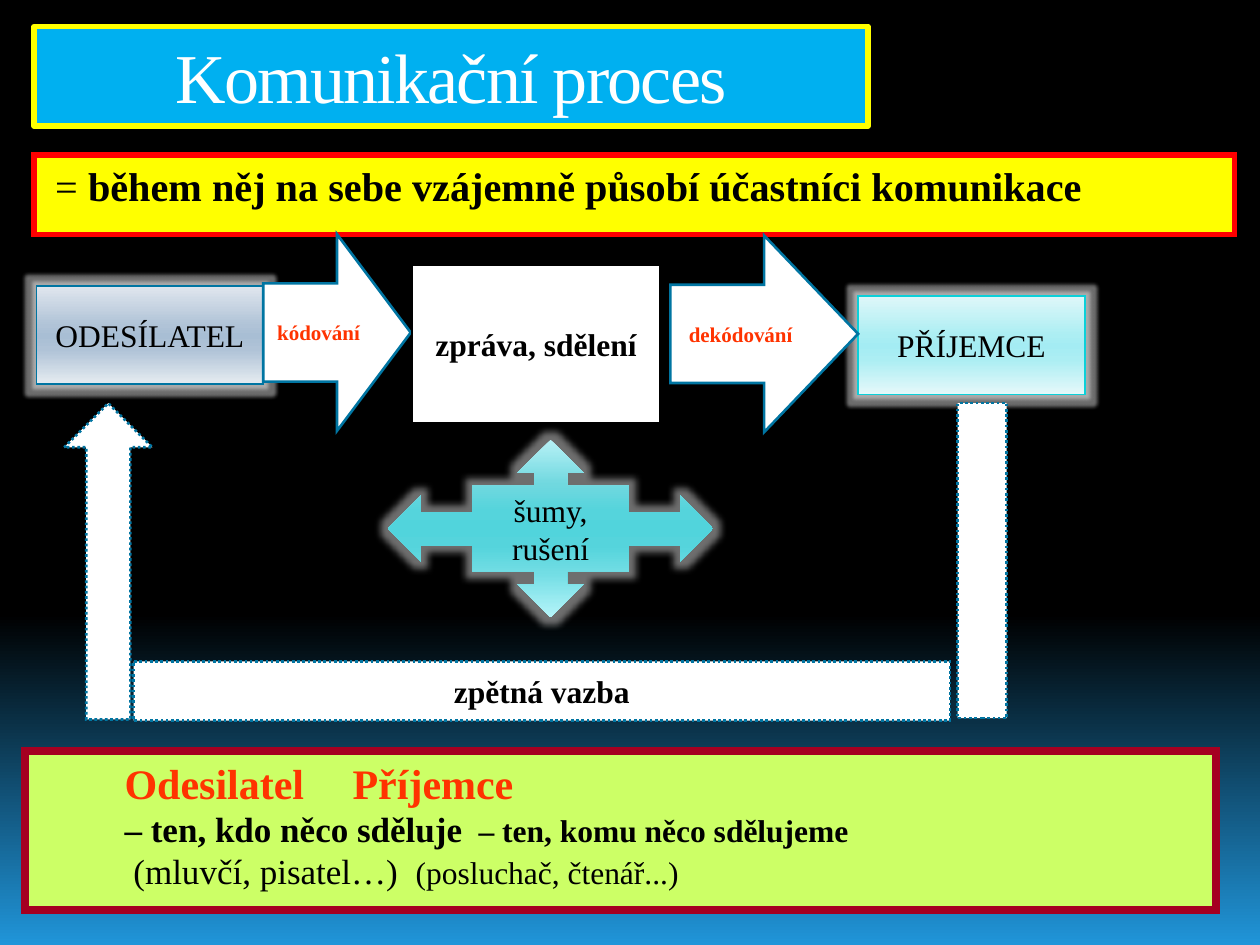
from lxml import etree
from pptx import Presentation
from pptx.dml.color import RGBColor
from pptx.enum.dml import MSO_LINE
from pptx.enum.shapes import MSO_SHAPE
from pptx.enum.text import MSO_ANCHOR, PP_ALIGN
from pptx.oxml.ns import qn
from pptx.util import Pt

PX = 9144  # 100 px to the inch
FONT = "Times New Roman"
RECTANGLE = MSO_SHAPE.RECTANGLE
RIGHT_ARROW = MSO_SHAPE.RIGHT_ARROW
UP_ARROW = MSO_SHAPE.UP_ARROW
CALLOUT = MSO_SHAPE.QUAD_ARROW_CALLOUT
DOTTED = MSO_LINE.ROUND_DOT
TOP, MIDDLE, BOTTOM = MSO_ANCHOR.TOP, MSO_ANCHOR.MIDDLE, MSO_ANCHOR.BOTTOM
LEFT, CENTER = PP_ALIGN.LEFT, PP_ALIGN.CENTER
BLACK, WHITE, RED, BLUE = "000000", "FFFFFF", "FF3300", "0075A2"
hex_color = RGBColor.from_string


def fill_gradient(fill, element, stops):
    """Fill from top to bottom with (percent, colour) stops."""
    fill.gradient()
    fill.gradient_angle = 270
    stop_list = element.xpath(".//a:gsLst")[0]
    for stop in list(stop_list):
        stop_list.remove(stop)
    for percent, color in stops:
        stop = etree.SubElement(stop_list, qn("a:gs"), pos=str(percent * 1000))
        etree.SubElement(stop, qn("a:srgbClr"), val=color)


def add_run(paragraph, text, size, color=BLACK, bold=False):
    run = paragraph.add_run()
    run.text = text
    formats = {"name": FONT, "size": Pt(size), "bold": bold}
    for name, value in formats.items():
        setattr(run.font, name, value)
    run.font.color.rgb = hex_color(color)
    return run


presentation = Presentation()
presentation.slide_width, presentation.slide_height = 1000 * PX, 750 * PX
slide = presentation.slides.add_slide(presentation.slide_layouts[5])
fill_gradient(slide.background.fill, slide.element,
              [(0, BLACK), (65, BLACK), (100, "2095D9")])

# Title
title = slide.shapes.title
title_box = {"left": 27, "top": 21, "width": 662, "height": 79}
for name, value in title_box.items():
    setattr(title, name, value * PX)
title.fill.solid()
title.fill.fore_color.rgb = hex_color("00B0F0")
title.line.color.rgb = hex_color("FFFF00")
title.line.width = Pt(3)
title.text_frame.vertical_anchor = BOTTOM
title.text_frame.margin_bottom = 7 * PX
title_paragraph = title.text_frame.paragraphs[0]
title_paragraph.alignment = CENTER
title_run = add_run(title_paragraph, "Komunikační proces", 40, WHITE)
title_run.font._element.set("spc", "-100")

# Panels and diagram, from back to front
sender_stops = [(0, "E0E6EE"), (40, "B0C3D7"), (50, "A8BED4"),
                (65, "B0C3D7"), (100, "E6ECF1")]
receiver_stops = [(0, "DEF7F9"), (40, "ACEEF3"), (50, "A4ECF3"),
                  (65, "ACEEF3"), (100, "E5F8FA")]
noise_stops = [(0, "B7F1F6"), (25, "70D8DF"), (40, "55D4DC"), (50, "51D4DC"),
               (60, "55D4DC"), (75, "72DDE4"), (100, "B5F4F9")]
# name, preset, box, fill, line (colour, width, dash), text (wording, size, colour, bold)
parts = [
    ("definition", RECTANGLE, (27, 123, 953, 63), "FFFF00", ("FF0000", 3, None), None),
    ("sender", RECTANGLE, (29, 227, 180, 78), sender_stops, (BLUE, 0.94, None),
     ("ODESÍLATEL", 18, BLACK, False)),
    ("encoding", RIGHT_ARROW, (209, 186, 117, 156), WHITE, (BLUE, 1.5, None),
     ("kódování", 12, RED, True)),
    ("message", RECTANGLE, (327, 210, 197, 126), WHITE, (BLACK, 1.5, None),
     ("zpráva, sdělení", 18, BLACK, True)),
    ("receiver", RECTANGLE, (681, 235, 180, 78), receiver_stops, ("0BD0D9", 0.94, None),
     ("PŘÍJEMCE", 18, BLACK, False)),
    ("feedback up", UP_ARROW, (51, 320, 70, 251), WHITE, (BLUE, 1.5, DOTTED), None),
    ("feedback down", RECTANGLE, (760, 320, 39, 250), WHITE, (BLUE, 1.5, DOTTED), None),
    ("feedback", RECTANGLE, (106, 525, 648, 47), WHITE, (BLUE, 1.5, DOTTED),
     ("zpětná vazba", 18, BLACK, True)),
    ("noise", CALLOUT, (308, 349, 258, 141), noise_stops, None,
     ("šumy, rušení", 18, BLACK, False)),
    ("roles", RECTANGLE, (20, 596, 945, 126), "CCFF66", ("A50021", 4.5, None), None),
    ("decoding", RIGHT_ARROW, (532, 187, 149, 156), WHITE, (BLUE, 1.5, None),
     ("dekódování", 12, RED, True)),
]
shapes = {}
for name, preset, box, fill, line, text in parts:
    shape = slide.shapes.add_shape(preset, *(length * PX for length in box))
    shape.shadow.inherit = False
    shapes[name] = shape
    if isinstance(fill, str):
        shape.fill.solid()
        shape.fill.fore_color.rgb = hex_color(fill)
    else:
        fill_gradient(shape.fill, shape.element, fill)
        glow_radius = 6 if line else 11
        effects = shape.element.spPr.find(qn("a:effectLst"))
        glow = etree.SubElement(effects, qn("a:glow"), rad=str(glow_radius * PX))
        glow_color = etree.SubElement(glow, qn("a:srgbClr"), val=WHITE)
        etree.SubElement(glow_color, qn("a:alpha"), val="43000")
    if line:
        color, width, dash = line
        shape.line.color.rgb = hex_color(color)
        shape.line.width = Pt(width)
        shape.line.dash_style = dash
        outline = shape.element.spPr.find(qn("a:ln"))
        etree.SubElement(outline, qn("a:miter"), lim="800000")
    else:
        shape.line.fill.background()
    if text:
        shape.text_frame.vertical_anchor = MIDDLE
        paragraph = shape.text_frame.paragraphs[0]
        paragraph.alignment = CENTER
        add_run(paragraph, *text)

# Definition
definition = shapes["definition"].text_frame
definition.vertical_anchor = TOP
definition.margin_top = 5 * PX
paragraph = definition.paragraphs[0]
paragraph.alignment = LEFT
paragraph_properties = paragraph._p.get_or_add_pPr()
paragraph_properties.set("marL", str(45 * PX))
paragraph_properties.set("indent", str(-38 * PX))
add_run(paragraph, "= ", 23)
add_run(paragraph, "během něj na sebe vzájemně působí účastníci komunikace", 23, bold=True)

# Roles: indent, left entry, tab stop, right entry; an entry is (wording, size, colour, bold)
role_lines = [
    (69, ("Odesilatel", 24, RED, True), 560, ("Příjemce", 24, RED, True)),
    (69, ("– ten, kdo něco sděluje", 20, BLACK, True),
     499, ("– ten, komu něco sdělujeme", 18, BLACK, True)),
    (76, ("(mluvčí, pisatel…)", 20, BLACK, False),
     550, ("(posluchač, čtenář...)", 18, BLACK, False)),
]
roles = shapes["roles"].text_frame
roles.vertical_anchor = TOP
for index, (indent, sender_entry, tab_stop, receiver_entry) in enumerate(role_lines):
    paragraph = roles.add_paragraph() if index else roles.paragraphs[0]
    paragraph.alignment = LEFT
    paragraph_properties = paragraph._p.get_or_add_pPr()
    paragraph_properties.set("marL", "0")
    paragraph_properties.set("indent", str(indent * PX))
    tab_list = etree.SubElement(paragraph_properties, qn("a:tabLst"))
    etree.SubElement(tab_list, qn("a:tab"), pos=str(tab_stop * PX), algn="l")
    add_run(paragraph, *sender_entry)
    wording, *formats = receiver_entry
    add_run(paragraph, "\t" + wording, *formats)

presentation.save("out.pptx")
